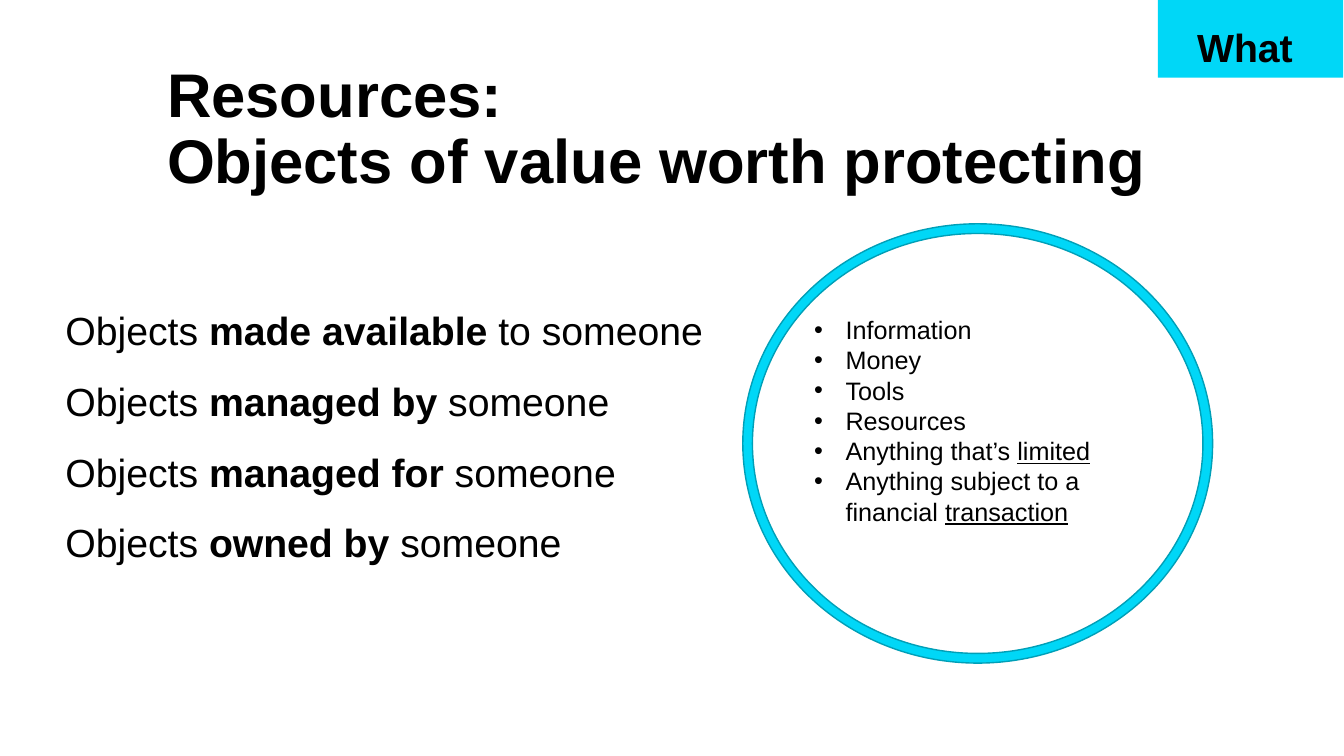
import pptx
import pptx.util
import pptx.dml.color
import pptx.enum.shapes
import pptx.enum.text
import pptx.oxml.ns
from lxml import etree
from pptx.util import Cm

COLORS = {"text": "000000", "cyan": "00D7F7", "edge": "009FB7"}
FONT = "Arial"
SHAPE = pptx.enum.shapes.MSO_SHAPE
ANCHOR = pptx.enum.text.MSO_ANCHOR
ALIGN = pptx.enum.text.PP_ALIGN

OBJECTS = [
    ("made available", " to someone"),
    ("managed by ", "someone"),
    ("managed for ", "someone"),
    ("owned by ", "someone"),
]
ITEMS = [
    ("Information", ""),
    ("Money", ""),
    ("Tools", ""),
    ("Resources", ""),
    ("Anything that’s ", "limited"),
    ("Anything subject to a financial ", "transaction"),
]


def color(name):
    return pptx.dml.color.RGBColor.from_string(COLORS[name])


def add_run(para, text, size, bold=False, under=False):
    run = para.add_run()
    run.text = text
    font = run.font
    font.name = FONT
    font.size = pptx.util.Pt(size)
    font.bold = bold
    font.underline = under
    font.color.rgb = color("text")


def add_box(slide, area, anchor=ANCHOR.TOP):
    frame = slide.shapes.add_textbox(*map(Cm, area)).text_frame
    frame.word_wrap = True
    frame.vertical_anchor = anchor
    return frame


def add_paras(frame, count):
    for _ in range(count - 1):
        frame.add_paragraph()
    return frame.paragraphs


def add_bullet(para):
    props = para._p.get_or_add_pPr()
    props.set("marL", str(Cm(0.79)))
    props.set("indent", str(Cm(-0.79)))
    etree.SubElement(props, pptx.oxml.ns.qn("a:buFont")).set("typeface", FONT)
    etree.SubElement(props, pptx.oxml.ns.qn("a:buChar")).set("char", "•")


def add_shape(slide, kind, area, edge=None):
    shape = slide.shapes.add_shape(kind, *map(Cm, area))
    shape.shadow.inherit = False
    shape.fill.solid()
    shape.fill.fore_color.rgb = color("cyan")
    if edge:
        shape.line.color.rgb = color(edge)
        shape.line.width = pptx.util.Pt(1)
    else:
        shape.line.fill.background()
    return shape


def add_title(slide, first, second):
    frame = add_box(slide, (3.96, 1.45, 26.92, 3.68), ANCHOR.MIDDLE)
    para = frame.paragraphs[0]
    para.line_spacing = 0.9
    add_run(para, first, 44, bold=True)
    para.add_line_break()
    add_run(para, second, 44, bold=True)


def add_ring(slide):
    ring = add_shape(slide, SHAPE.DONUT, (18.72, 5.64, 11.84, 11.07), "edge")
    ring.adjustments[0] = 0.022


def add_items(slide):
    frame = add_box(slide, (20.27, 7.8, 8.71, 5.64))
    for para, (plain, lined) in zip(add_paras(frame, len(ITEMS)), ITEMS):
        add_bullet(para)
        add_run(para, plain, 18)
        if lined:
            add_run(para, lined, 18, under=True)


def add_objects(slide):
    frame = add_box(slide, (1.4, 7.01, 16.94, 7.21))
    for para, (strong, rest) in zip(add_paras(frame, len(OBJECTS)), OBJECTS):
        para.line_spacing = 1.5
        add_run(para, "Objects ", 28)
        add_run(para, strong, 28, bold=True)
        add_run(para, rest, 28)


def add_tag(slide, text):
    frame = add_shape(slide, SHAPE.RECTANGLE, (29.18, 0, 4.67, 1.96)).text_frame
    frame.margin_left = 0
    frame.margin_top = Cm(0.51)
    frame.margin_right = Cm(1.27)
    frame.margin_bottom = Cm(0.13)
    frame.vertical_anchor = ANCHOR.MIDDLE
    para = frame.paragraphs[0]
    para.alignment = ALIGN.RIGHT
    add_run(para, text, 28, bold=True)


def main():
    deck = pptx.Presentation()
    deck.slide_width = Cm(33.87)
    deck.slide_height = Cm(19.05)
    slide = deck.slides.add_slide(deck.slide_layouts[6])
    add_title(slide, "Resources:", "Objects of value worth protecting")
    add_ring(slide)
    add_items(slide)
    add_objects(slide)
    add_tag(slide, "What")
    deck.save("out.pptx")


if __name__ == "__main__":
    main()
